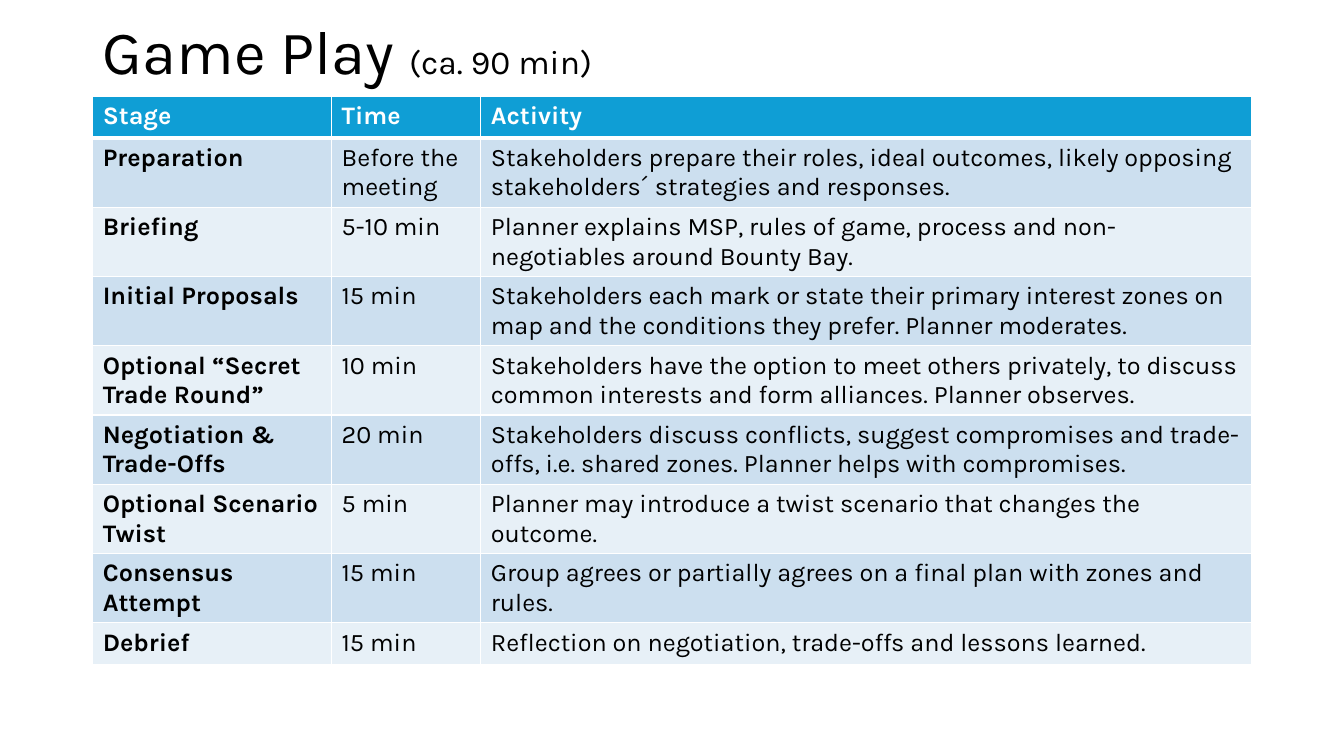
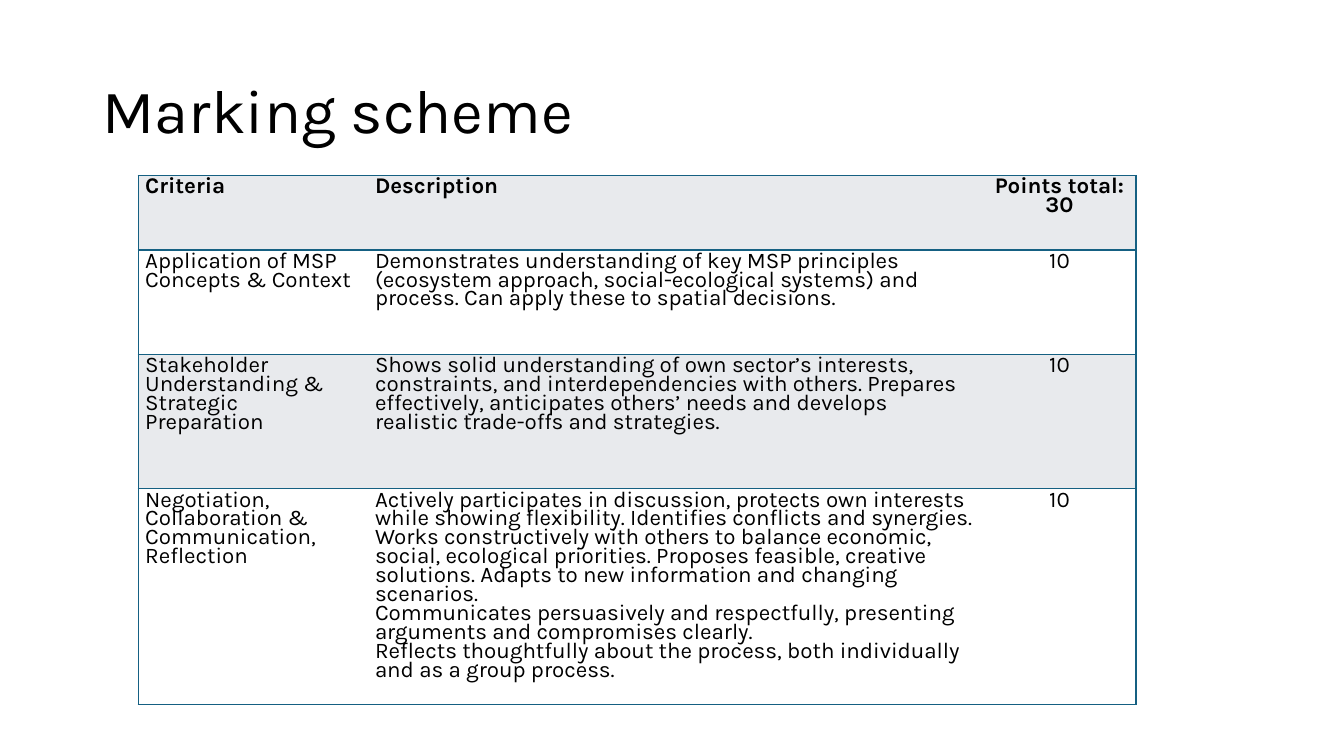
from lxml.etree import SubElement
from pptx import Presentation
from pptx.dml.color import RGBColor
from pptx.enum.text import MSO_ANCHOR, MSO_AUTO_SIZE, PP_ALIGN
from pptx.oxml.ns import qn
from pptx.util import Inches, Pt

FONT = "Karla"
COLORS = {
    "text": "000000",
    "white": "FFFFFF",
    "header": "0F9ED5",
    "band_dark": "CCDFEF",
    "band_light": "E7F0F7",
    "grey": "E8EAED",
    "rule": "156082",
}
SLIDE_WIDTH, SLIDE_HEIGHT = Inches(13.33), Inches(7.5)
MARGIN, CONTENT = 6.9, 86.25  # percent of the slide's width

STAGES = [
    ("Stage", "Time", "Activity"),
    ("Preparation", "Before the meeting",
     "Stakeholders prepare their roles, ideal outcomes, likely opposing "
     "stakeholders´ strategies and responses."),
    ("Briefing", "5-10 min",
     "Planner explains MSP, rules of game, process and non-negotiables "
     "around Bounty Bay."),
    ("Initial Proposals", "15 min",
     "Stakeholders each mark or state their primary interest zones on map "
     "and the conditions they prefer. Planner moderates."),
    ("Optional “Secret Trade Round”", "10 min",
     "Stakeholders have the option to meet others privately, to discuss "
     "common interests and form alliances. Planner observes."),
    ("Negotiation & Trade-Offs", "20 min",
     "Stakeholders discuss conflicts, suggest compromises and trade-offs, "
     "i.e. shared zones. Planner helps with compromises."),
    ("Optional Scenario Twist", "5 min",
     "Planner may introduce a twist scenario that changes the outcome."),
    ("Consensus Attempt", "15 min",
     "Group agrees or partially agrees on a final plan with zones and rules."),
    ("Debrief", "15 min",
     "Reflection on negotiation, trade-offs and lessons learned."),
]

CRITERIA = [
    ("Criteria", "Description", "Points total: 30"),
    ("Application of MSP Concepts & Context",
     "Demonstrates understanding of key MSP principles (ecosystem approach, "
     "social-ecological systems) and process. Can apply these to spatial "
     "decisions.", "10"),
    ("Stakeholder Understanding & Strategic Preparation",
     "Shows solid understanding of own sector’s interests, constraints, and "
     "interdependencies with others. Prepares effectively, anticipates "
     "others’ needs and develops realistic trade-offs and strategies.", "10"),
    ("Negotiation, Collaboration & Communication, Reflection",
     "Actively participates in discussion, protects own interests while "
     "showing flexibility. Identifies conflicts and synergies. Works "
     "constructively with others to balance economic, social, ecological "
     "priorities. Proposes feasible, creative solutions. Adapts to new "
     "information and changing scenarios.\n"
     "Communicates persuasively and respectfully, presenting arguments and "
     "compromises clearly.\n"
     "Reflects thoughtfully about the process, both individually and as a "
     "group process.", "10"),
]


def rgb(name):
    return RGBColor.from_string(COLORS[name])


def percent_box(left, top, width, height):
    """Turn percentages of the slide's size into lengths."""
    return (int(SLIDE_WIDTH * left / 100), int(SLIDE_HEIGHT * top / 100),
            int(SLIDE_WIDTH * width / 100), int(SLIDE_HEIGHT * height / 100))


def split(total, weights):
    return [int(total * weight / sum(weights)) for weight in weights]


def style_font(font, size, color="text", bold=False):
    font.name, font.size, font.bold = FONT, Pt(size), bold
    font.color.rgb = rgb(color)


def add_titled_slide(prs, heading, box, detail=""):
    slide = prs.slides.add_slide(prs.slide_layouts[5])
    title = slide.shapes.title
    title.left, title.top, title.width, title.height = box
    frame = title.text_frame
    frame.auto_size = MSO_AUTO_SIZE.NONE
    frame.vertical_anchor = MSO_ANCHOR.MIDDLE
    paragraph = frame.paragraphs[0]
    paragraph.alignment = PP_ALIGN.LEFT
    paragraph.line_spacing = 0.9
    style_font(paragraph.font, 44)
    paragraph.add_run().text = heading
    if detail:
        note = paragraph.add_run()
        note.text = detail
        note.font.size = Pt(24)
    return slide


def set_borders(cell, **borders):
    """Draw sides L, R, T, B, each given as (color, points) or None."""
    properties = cell._tc.get_or_add_tcPr()
    for position, side in enumerate("LRTB"):
        border = borders.get(side)
        line = SubElement(properties, qn(f"a:ln{side}"))
        if border:
            color, points = border
            line.set("w", str(Pt(points)))
            fill = SubElement(line, qn("a:solidFill"))
            SubElement(fill, qn("a:srgbClr")).set("val", COLORS[color])
        else:
            SubElement(line, qn("a:noFill"))
        properties.insert(position, line)


def add_grid(slide, box, entries, columns, rows):
    """Add a table with weighted columns and rows; yield its cells."""
    table = slide.shapes.add_table(len(entries), len(columns), *box).table
    for column, width in zip(table.columns, split(box[2], columns)):
        column.width = width
    for row, height in zip(table.rows, split(box[3], rows)):
        row.height = height
    for r, entry in enumerate(entries):
        for c, text in enumerate(entry):
            cell = table.cell(r, c)
            cell.text = text
            yield r, c, cell


def fill_cell(cell, color):
    cell.fill.solid()
    cell.fill.fore_color.rgb = rgb(color)


def stage_table(slide, box):
    thin, thick = ("white", 1), ("white", 3)
    bands = ("band_light", "band_dark")
    for r, c, cell in add_grid(slide, box, STAGES, (2.37, 1.48, 7.65),
                               [1] * len(STAGES)):
        header = r == 0
        fill_cell(cell, "header" if header else bands[r % 2])
        set_borders(cell, L=thin, R=thin, T=thick if r == 1 else thin,
                    B=thick if header else thin)
        style_font(cell.text_frame.paragraphs[0].font, 18,
                   "white" if header else "text", header or c == 0)


def marking_table(slide, box):
    rule = ("rule", 1)
    points_column = len(CRITERIA[0]) - 1
    for r, c, cell in add_grid(slide, box, CRITERIA, (2.28, 6.1, 1.52),
                               (0.74, 1.04, 1.33, 2.14)):
        fill_cell(cell, "white" if r % 2 else "grey")
        set_borders(cell, T=rule, B=rule, L=rule if c == 0 else None,
                    R=rule if c == points_column else None)
        cell.margin_left = cell.margin_right = Inches(0.07)
        for paragraph in cell.text_frame.paragraphs:
            paragraph.line_spacing = Pt(13.5)
            if c == points_column:
                paragraph.alignment = PP_ALIGN.CENTER
            style_font(paragraph.font, 16, bold=r == 0)


def main():
    prs = Presentation()
    prs.slide_width, prs.slide_height = SLIDE_WIDTH, SLIDE_HEIGHT

    game_play = add_titled_slide(
        prs, "Game Play ", percent_box(MARGIN, 1.73, CONTENT, 11.07),
        "(ca. 90 min)")
    stage_table(game_play, percent_box(MARGIN, 12.8, CONTENT, 49.2))

    marking = add_titled_slide(
        prs, "Marking scheme", percent_box(MARGIN, 5.33, CONTENT, 19.33))
    marking_table(marking, percent_box(10.28, 23.2, 74.25, 70))

    prs.save("out.pptx")


if __name__ == "__main__":
    main()
